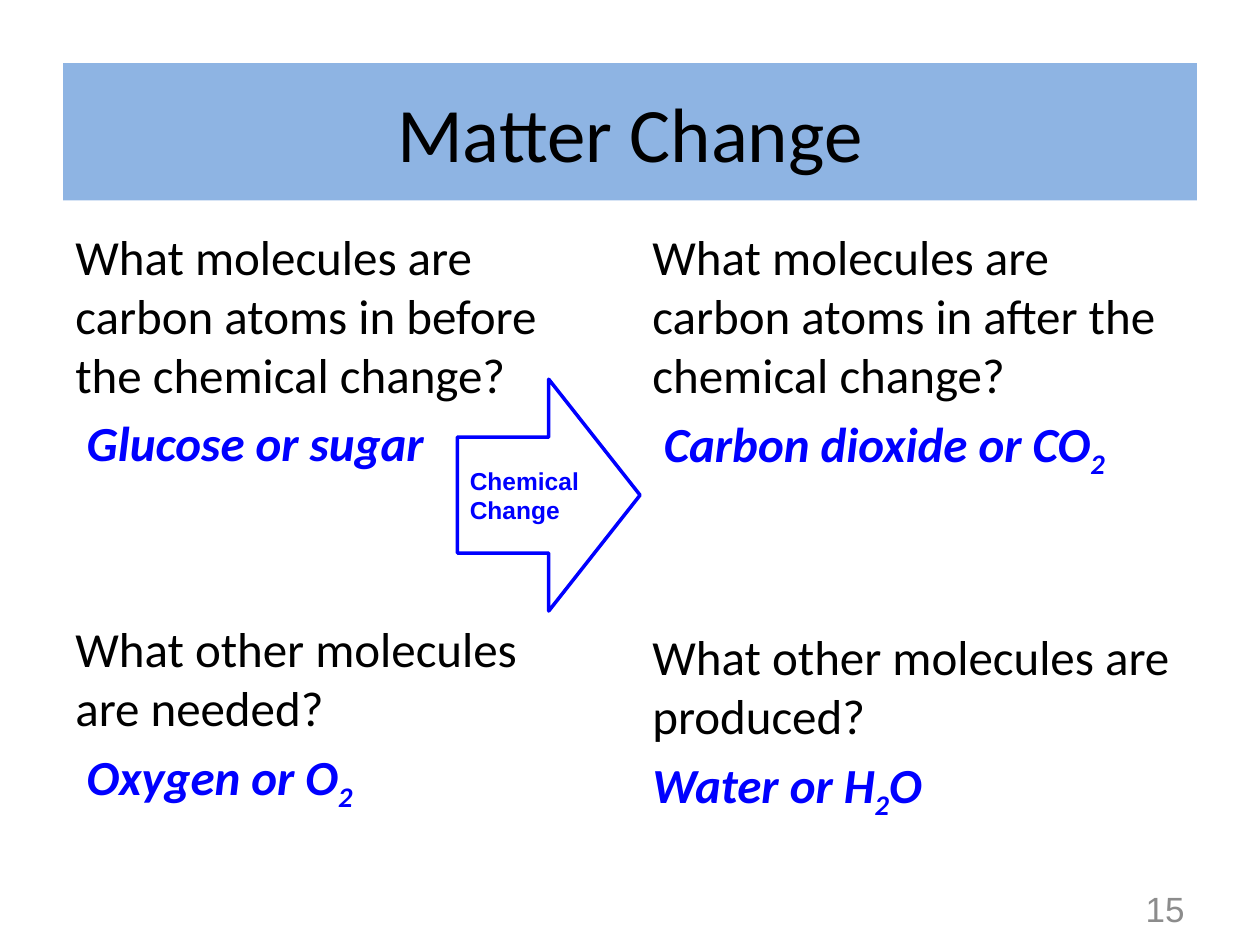
from pptx import Presentation
from pptx.dml.color import RGBColor
from pptx.enum.shapes import MSO_SHAPE
from pptx.enum.text import MSO_ANCHOR, PP_ALIGN
from pptx.util import Inches, Pt

RIGHT_ARROW = MSO_SHAPE.RIGHT_ARROW
MIDDLE, TOP = MSO_ANCHOR.MIDDLE, MSO_ANCHOR.TOP
LEFT, CENTER, RIGHT = PP_ALIGN.LEFT, PP_ALIGN.CENTER, PP_ALIGN.RIGHT
BLACK = RGBColor(0x00, 0x00, 0x00)
WHITE = RGBColor(0xFF, 0xFF, 0xFF)
BLUE = RGBColor(0x00, 0x00, 0xFF)
BANNER = RGBColor(0x8E, 0xB4, 0xE3)
GRAY = RGBColor(0x8C, 0x8C, 0x8C)

# Content: each column holds (question, answer, answer indent in inches);
# "_" comes before a subscript digit
TITLE = "Matter Change"
ARROW_LABEL = "Chemical Change"
PAGE = "15"
BEFORE = [
    ("What molecules are carbon atoms in before the chemical change?", "Glucose or sugar", 0.09),
    ("What other molecules\nare needed?", "Oxygen or O_2", 0.09),
]
AFTER = [
    ("What molecules are carbon atoms in after the chemical change?", "Carbon dioxide or CO_2", 0.09),
    ("What other molecules are produced?", "Water or H_2O", 0),
]

# Layout in inches, spacing in points
SLIDE_W, SLIDE_H = 10, 7.5
MARGIN = 0.5
CONTENT_W = SLIDE_W - 2 * MARGIN
COLUMN_TOP = 1.75
COLUMNS = [(BEFORE, MARGIN, 4.36, 5.26), (AFTER, 5.08, 4.42, 4.95)]
LINE_GAP, BLOCK_GAP = 5.6, 84


def add_run(paragraph, text, size, color, font="Calibri", bold=False, italic=False):
    run = paragraph.add_run()
    run.text = text
    run.font.name, run.font.size = font, Pt(size)
    run.font.bold, run.font.italic = bold, italic
    run.font.color.rgb = color
    return run


def add_box(left, top, width, height, anchor):
    box = slide.shapes.add_textbox(Inches(left), Inches(top), Inches(width), Inches(height))
    frame = box.text_frame
    frame.word_wrap, frame.vertical_anchor = True, anchor
    return frame


def add_question(paragraph, question):
    for number, line in enumerate(question.split("\n")):
        if number:
            paragraph.add_line_break()
        add_run(paragraph, line, 28, BLACK)


def add_answer(paragraph, answer, indent):
    properties = paragraph._p.get_or_add_pPr()
    properties.set("marL", str(Inches(indent)))
    properties.set("indent", "0")
    stem, _, tail = answer.partition("_")
    for text, is_subscript in ((stem, False), (tail[:1], True), (tail[1:], False)):
        if text:
            run = add_run(paragraph, text, 28, BLUE, bold=True, italic=True)
            if is_subscript:
                run.font._element.set("baseline", "-25000")


prs = Presentation()
prs.slide_width, prs.slide_height = Inches(SLIDE_W), Inches(SLIDE_H)
slide = prs.slides.add_slide(prs.slide_layouts[5])

# Title banner
title = slide.shapes.title
title.left, title.top = Inches(MARGIN), Inches(MARGIN)
title.width, title.height = Inches(CONTENT_W), Inches(1.09)
title.fill.solid()
title.fill.fore_color.rgb = BANNER
title.text_frame.vertical_anchor = MIDDLE
heading = title.text_frame.paragraphs[0]
heading.alignment = CENTER
add_run(heading, TITLE, 44, BLACK)

# Question and answer columns
for pairs, left, width, height in COLUMNS:
    frame = add_box(left, COLUMN_TOP, width, height, TOP)
    for row, (question, answer, indent) in enumerate(pairs):
        paragraph = frame.add_paragraph() if row else frame.paragraphs[0]
        paragraph.space_before = Pt(BLOCK_GAP if row else LINE_GAP)
        add_question(paragraph, question)
        paragraph = frame.add_paragraph()
        paragraph.space_before = Pt(LINE_GAP)
        add_answer(paragraph, answer, indent)

# Page number
page_line = add_box(7.17, 7.01, 2.33, 0.4, MIDDLE).paragraphs[0]
page_line.alignment = RIGHT
add_run(page_line, PAGE, 20, GRAY, font="Arial")

# Arrow between the columns
arrow = slide.shapes.add_shape(RIGHT_ARROW, Inches(3.63), Inches(3.01), Inches(1.45), Inches(1.84))
arrow.shadow.inherit = False
arrow.fill.solid()
arrow.fill.fore_color.rgb = WHITE
arrow.line.color.rgb = BLUE
arrow.line.width = Pt(2)
arrow.text_frame.word_wrap = True
arrow.text_frame.vertical_anchor = MIDDLE
label = arrow.text_frame.paragraphs[0]
label.alignment = LEFT
add_run(label, ARROW_LABEL, 14, BLUE, font="Arial", bold=True)

prs.save("out.pptx")
